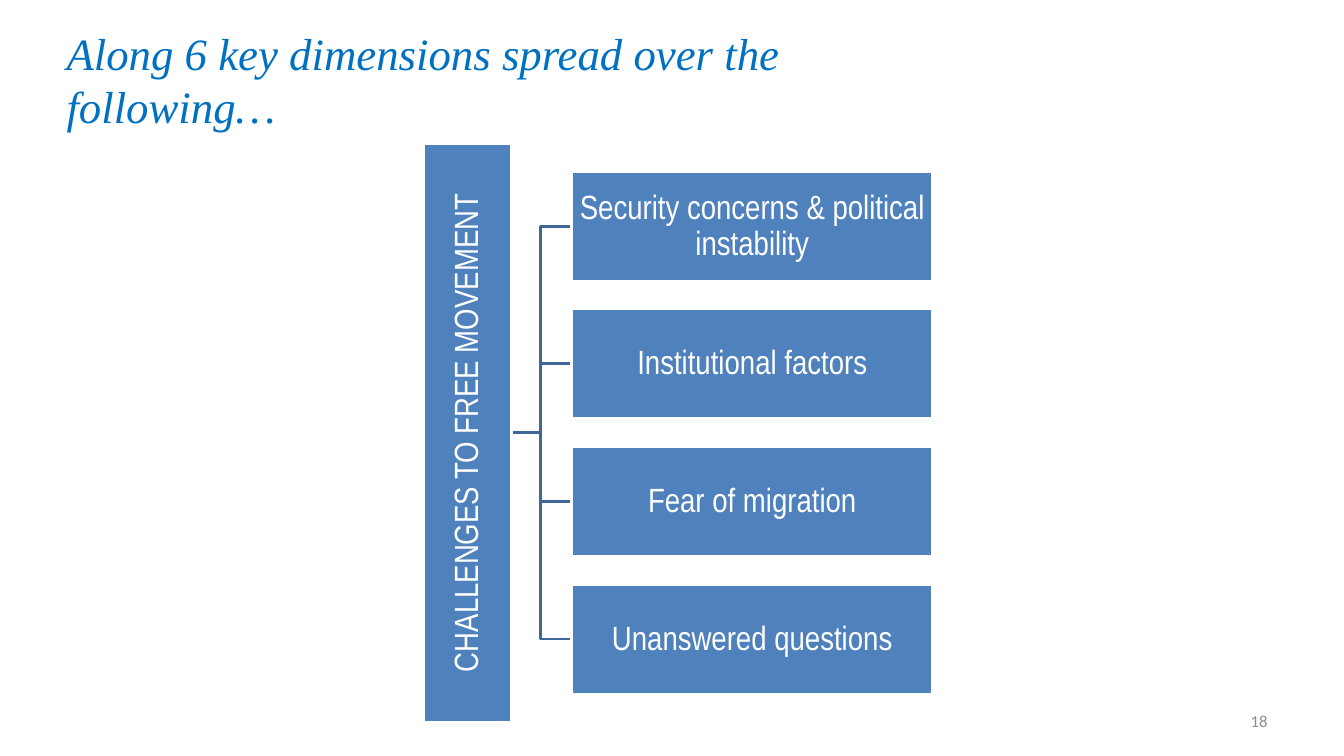
from pptx import Presentation
from pptx.dml.color import RGBColor
from pptx.enum.shapes import MSO_SHAPE
from pptx.enum.text import MSO_ANCHOR, MSO_AUTO_SIZE, PP_ALIGN
from pptx.util import Inches, Pt

BLUE, LINE_BLUE, WHITE = "4F81BD", "3F6797", "FFFFFF"
TOPICS = [
    "Security concerns & political instability",
    "Institutional factors",
    "Fear of migration",
    "Unanswered questions",
]
TOPIC_LEFT, TOPIC_TOP, TOPIC_STEP = 5.67, 1.7, 1.365
TOPIC_WIDTH, TOPIC_HEIGHT = 3.58, 1.09
TRUNK_LEFT, TRUNK_MIDDLE = 5.06, 4.29

BOX_FRAME = {
    "word_wrap": True,
    "vertical_anchor": MSO_ANCHOR.MIDDLE,
    **{f"margin_{side}": Inches(0.02) for side in ("left", "top", "right", "bottom")},
}
BOX_PARA = {"alignment": PP_ALIGN.CENTER, "line_spacing": 0.9}
BOX_FONT = {"name": "Arial Narrow", "size": Pt(24)}


def set_color(color_format, value):
    color_format.rgb = RGBColor.from_string(value)


def set_values(target, values):
    for name, value in values.items():
        setattr(target, name, value)


def place(shape, left, top, width, height):
    set_values(shape, {
        "left": Inches(left), "top": Inches(top),
        "width": Inches(width), "height": Inches(height),
    })


def set_line(shape, color):
    set_color(shape.line.color, color)
    shape.line.width = Pt(2)
    shape.shadow.inherit = False


def write_text(shape, text, color, font, para_format, frame_format):
    frame = shape.text_frame
    set_values(frame, frame_format)
    para = frame.paragraphs[0]
    set_values(para, para_format)
    span = para.add_run()
    span.text = text
    set_values(span.font, font)
    set_color(span.font.color, color)


def add_box(page, text, left, top, width, height, rotation=0):
    box = page.shapes.add_shape(
        MSO_SHAPE.RECTANGLE, Inches(left), Inches(top), Inches(width), Inches(height))
    box.rotation = rotation
    box.fill.solid()
    set_color(box.fill.fore_color, BLUE)
    set_line(box, WHITE)
    write_text(box, text, WHITE, BOX_FONT, BOX_PARA, BOX_FRAME)


def add_branch(page, target_y):
    """Draw an elbow line from the vertical box to one topic."""
    bend = (TRUNK_LEFT + TOPIC_LEFT) / 2
    points = [(bend, TRUNK_MIDDLE), (bend, target_y), (TOPIC_LEFT, target_y)]
    builder = page.shapes.build_freeform(Inches(TRUNK_LEFT), Inches(TRUNK_MIDDLE))
    builder.add_line_segments([(Inches(x), Inches(y)) for x, y in points], close=False)
    branch = builder.convert_to_shape()
    branch.fill.background()
    set_line(branch, LINE_BLUE)


def add_title(page, text):
    title = page.shapes.title
    place(title, 0.56, 0.2, 9, 0.68)
    write_text(
        title, text, "0070C0",
        {"name": "Times New Roman", "size": Pt(32), "italic": True},
        {"alignment": PP_ALIGN.LEFT},
        {"word_wrap": True, "vertical_anchor": MSO_ANCHOR.TOP,
         "auto_size": MSO_AUTO_SIZE.NONE})


def add_page_number(page, number):
    box = page.shapes.add_textbox(Inches(9.56), Inches(6.95), Inches(3.11), Inches(0.4))
    write_text(
        box, number, "8C8C8C", {"name": "Calibri", "size": Pt(12)},
        {"alignment": PP_ALIGN.RIGHT},
        {"word_wrap": True, "vertical_anchor": MSO_ANCHOR.MIDDLE})


def main():
    deck = Presentation()
    set_values(deck, {"slide_width": Inches(13.33), "slide_height": Inches(7.5)})
    page = deck.slides.add_slide(deck.slide_layouts.get_by_name("Title Only"))
    add_title(page, "Along 6 key dimensions spread over the following…")

    tops = [TOPIC_TOP + row * TOPIC_STEP for row in range(len(TOPICS))]
    for top in tops:
        add_branch(page, top + TOPIC_HEIGHT / 2)
    add_box(page, "CHALLENGES TO FREE MOVEMENT", 1.76, 3.86, 5.75, 0.87, rotation=270)
    for topic, top in zip(TOPICS, tops):
        add_box(page, topic, TOPIC_LEFT, top, TOPIC_WIDTH, TOPIC_HEIGHT)

    add_page_number(page, "18")
    deck.save("out.pptx")


if __name__ == "__main__":
    main()
